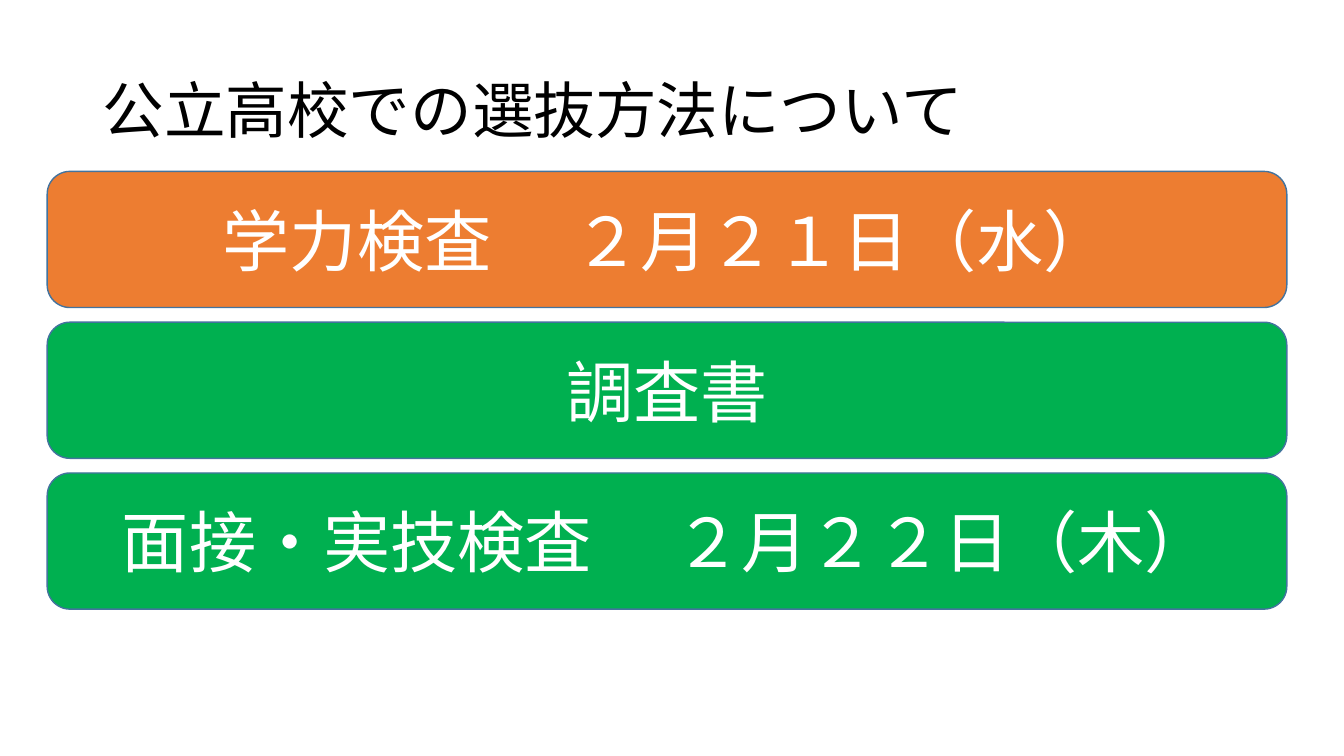
from dataclasses import dataclass

from pptx import Presentation
from pptx.dml.color import RGBColor
from pptx.enum.shapes import MSO_SHAPE as Shape
from pptx.enum.text import MSO_ANCHOR as Anchor, MSO_AUTO_SIZE as Fit, PP_ALIGN as Align
from pptx.slide import Slide
from pptx.text.text import TextFrame
from pptx.util import Cm, Pt

BLACK = RGBColor(0x00, 0x00, 0x00)
WHITE = RGBColor(0xFF, 0xFF, 0xFF)
GREEN = RGBColor(0x00, 0xB0, 0x50)
ORANGE = RGBColor(0xED, 0x7D, 0x31)
EDGE = RGBColor(0x43, 0x73, 0x9E)
FONT = "Calibri"

LEFT, TOP = 1.19, 4.32
WIDTH, HEIGHT = 31.24, 3.43
STEP = 3.8


@dataclass
class Exam:
    text: str
    color: RGBColor


EXAMS = [
    Exam("学力検査\u3000 ２月２１日（水）".replace("\u3000", "　"), ORANGE),
    Exam("調査書", GREEN),
    Exam("面接・実技検査　 ２月２２日（木）", GREEN),
]
EXAMS[0].text = "学力検査　 ２月２１日（水）"


def write(frame: TextFrame, text: str, size: int, color: RGBColor, align: Align) -> None:
    frame.text = text
    frame.word_wrap = True
    frame.auto_size = Fit.NONE
    frame.vertical_anchor = Anchor.MIDDLE
    line = frame.paragraphs[0]
    line.alignment = align
    font = line.runs[0].font
    font.name, font.size = FONT, Pt(size)
    font.color.rgb = color


def add_title(slide: Slide, text: str) -> None:
    title = slide.shapes.title
    title.left, title.top = Cm(2.33), Cm(1.01)
    title.width, title.height = Cm(29.21), Cm(3.68)
    write(title.text_frame, text, 44, BLACK, Align.LEFT)
    title.text_frame.paragraphs[0].line_spacing = 0.9


def add_exam(slide: Slide, exam: Exam, row: int) -> None:
    bar = slide.shapes.add_shape(
        Shape.ROUNDED_RECTANGLE, Cm(LEFT), Cm(TOP + row * STEP), Cm(WIDTH), Cm(HEIGHT)
    )
    bar.shadow.inherit = False
    bar.fill.solid()
    bar.fill.fore_color.rgb = exam.color
    bar.line.color.rgb = EDGE
    bar.line.width = Pt(1)
    write(bar.text_frame, exam.text, 48, WHITE, Align.CENTER)


def main() -> None:
    deck = Presentation()
    deck.slide_width, deck.slide_height = Cm(33.87), Cm(19.05)
    slide = deck.slides.add_slide(deck.slide_layouts[5])
    add_title(slide, "公立高校での選抜方法について")
    for row, exam in enumerate(EXAMS):
        add_exam(slide, exam, row)
    deck.save("out.pptx")


if __name__ == "__main__":
    main()
